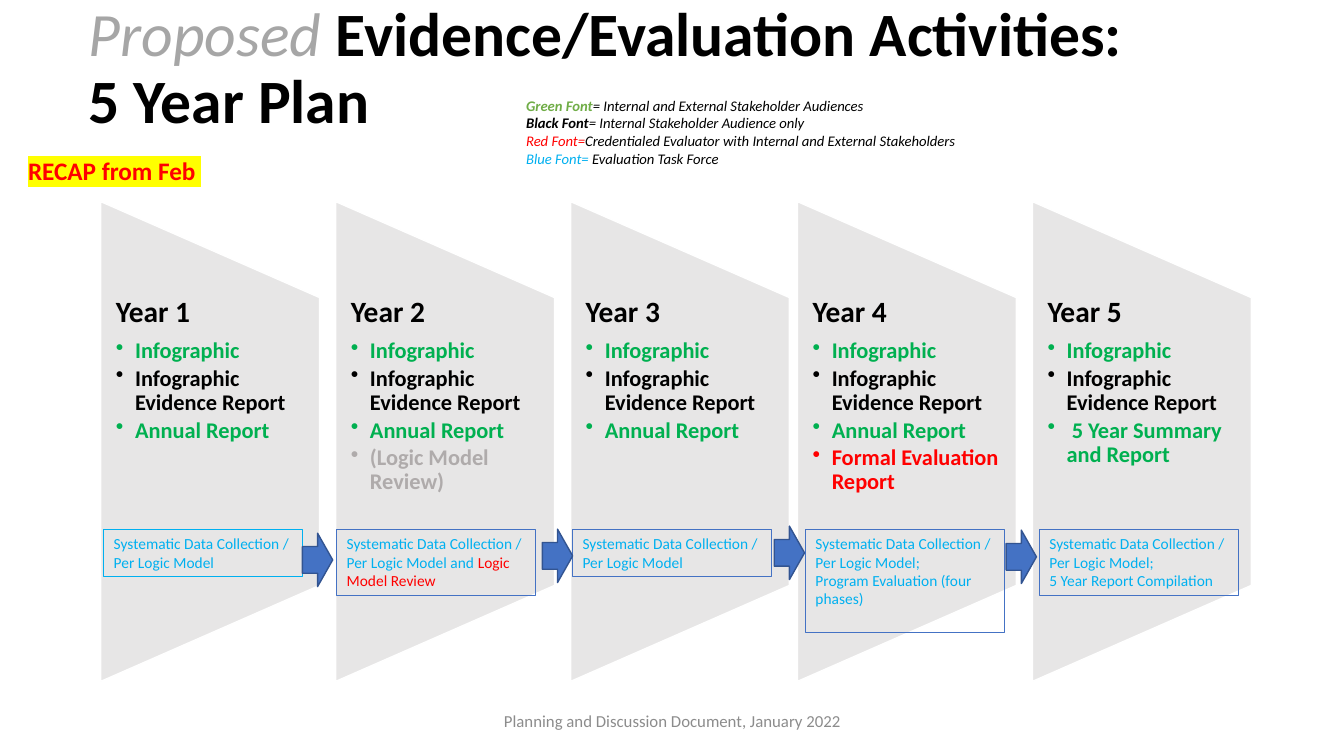
from dataclasses import dataclass

from lxml.etree import SubElement
from pptx import Presentation
from pptx.dml.color import RGBColor
from pptx.enum.shapes import MSO_SHAPE
from pptx.enum.text import MSO_ANCHOR, MSO_AUTO_SIZE, PP_ALIGN
from pptx.oxml import parse_xml
from pptx.oxml.ns import nsdecls, qn
from pptx.util import Inches, Pt


@dataclass(frozen=True)
class Theme:
    font: str = "Calibri"
    black: str = "000000"
    white: str = "FFFFFF"
    green: str = "00B050"
    lime: str = "70AD47"
    red: str = "FF0000"
    sky: str = "00B0F0"
    blue: str = "4472C4"
    navy: str = "325491"
    pale: str = "E7E6E6"
    silver: str = "A6A6A6"
    ash: str = "AFABAB"
    gray: str = "8C8C8C"
    yellow: str = "FFFF00"
    title: float = 44
    year: float = 21
    item: float = 16
    recap: float = 18
    foot: float = 12
    note: float = 11
    key: float = 10.5


T = Theme()

COMMON = [("Infographic", T.green), ("Infographic Evidence Report", T.black)]
ANNUAL = ("Annual Report", T.green)
COLLECT = "Systematic Data Collection / Per Logic Model"

# Panel left, items
YEARS = [
    (1.0, [ANNUAL]),
    (3.33, [ANNUAL, ("(Logic Model Review)", T.ash)]),
    (5.66, [ANNUAL]),
    (7.91, [ANNUAL, ("Formal Evaluation Report", T.red)]),
    (10.24, [(" 5 Year Summary and Report", T.green)]),
]

# Box left, height, outline, paragraphs of (text, colour) parts
TASKS = [
    (1.03, 0.47, T.sky, [[(COLLECT, T.sky)]]),
    (3.34, 0.66, T.blue, [[(COLLECT + " and ", T.sky), ("Logic Model Review", T.red)]]),
    (5.68, 0.47, T.blue, [[(COLLECT, T.sky)]]),
    (7.99, 1.03, T.blue, [[(COLLECT + ";", T.sky)],
                          [("Program Evaluation (four phases)", T.sky)]]),
    (10.31, 0.66, T.blue, [[(COLLECT + ";", T.sky)],
                           [("5 Year Report Compilation", T.sky)]]),
]

ARROWS = [(3.0, 5.29), (5.38, 5.25), (7.68, 5.22), (9.98, 5.26)]

LEGEND = [
    [("Green Font", T.lime, True), ("= Internal and External Stakeholder Audiences", T.black)],
    [("Black Font", T.black, True), ("= Internal Stakeholder Audience only", T.black)],
    [("Red Font=", T.red),
     ("Credentialed Evaluator with Internal and External Stakeholders", T.black)],
    [("Blue Font= ", T.sky), ("Evaluation Task Force", T.black)],
]


def add_run(para, text, size, color, bold=False, italic=False):
    run = para.add_run()
    run.text = text
    font = run.font
    font.name, font.size = T.font, Pt(size)
    font.bold, font.italic = bold, italic
    font.color.rgb = RGBColor.from_string(color)
    return run


def next_para(frame):
    """Return the first paragraph while it is empty, else a new one."""
    first = frame.paragraphs[0]
    return frame.add_paragraph() if first.runs else first


def add_lines(frame, lines, size, italic=False):
    for parts in lines:
        para = next_para(frame)
        para.alignment = PP_ALIGN.LEFT
        for text, color, *bold in parts:
            add_run(para, text, size, color, bool(bold), italic)


def add_box(slide, left, top, width, height, wrap=True):
    box = slide.shapes.add_textbox(*map(Inches, (left, top, width, height)))
    box.text_frame.word_wrap = wrap
    return box.text_frame


def add_form(slide, kind, place, fill, line, weight):
    form = slide.shapes.add_shape(kind, *map(Inches, place))
    form.shadow.inherit = False
    if fill:
        form.fill.solid()
        form.fill.fore_color.rgb = RGBColor.from_string(fill)
    else:
        form.fill.background()
    form.line.color.rgb = RGBColor.from_string(line)
    form.line.width = Pt(weight)
    return form


def set_bullet(para):
    props = para._p.get_or_add_pPr()
    props.set("marL", str(Inches(0.19)))
    props.set("indent", str(-Inches(0.19)))
    SubElement(props, qn("a:buChar")).set("char", "•")


def add_title(slide):
    title = slide.shapes.title
    title.left, title.top = Inches(0.78), Inches(-0.03)
    title.width, title.height = Inches(12.32), Inches(1.45)
    frame = title.text_frame
    frame.auto_size = MSO_AUTO_SIZE.NONE
    frame.vertical_anchor = MSO_ANCHOR.MIDDLE
    para = frame.paragraphs[0]
    para.alignment, para.line_spacing = PP_ALIGN.LEFT, 0.9
    add_run(para, "Proposed", T.title, T.silver, italic=True)
    add_run(para, " Evidence/Evaluation Activities:", T.title, T.black, True)
    para.add_line_break()
    add_run(para, "5 Year Plan", T.title, T.black, True)


def add_year(slide, name, left, items):
    wide, tall, mid = 2.17, 4.76, 4.38
    place = (left - (tall - wide) / 2, mid - wide / 2, tall, wide)
    panel = add_form(slide, MSO_SHAPE.FLOWCHART_MANUAL_OPERATION, place, T.pale, T.white, 1)
    panel.rotation = 270
    frame = add_box(slide, left, 2.95, wide, 2.86)
    frame.margin_left = frame.margin_right = Inches(0.15)
    frame.margin_top = frame.margin_bottom = 0
    head = next_para(frame)
    head.line_spacing, head.space_after = 0.9, Pt(7.4)
    add_run(head, name, T.year, T.black, True)
    for text, color in COMMON + items:
        para = next_para(frame)
        para.line_spacing, para.space_after = 0.9, Pt(2.4)
        set_bullet(para)
        add_run(para, text, T.item, color, True)


def add_task(slide, left, height, line, lines):
    place = (left, 5.25, 1.97, height)
    frame = add_form(slide, MSO_SHAPE.RECTANGLE, place, None, line, 0.75).text_frame
    frame.word_wrap = True
    frame.vertical_anchor = MSO_ANCHOR.TOP
    add_lines(frame, lines, T.note)


def add_foot(slide):
    frame = add_box(slide, 4.42, 6.95, 4.5, 0.4)
    frame.vertical_anchor = MSO_ANCHOR.MIDDLE
    para = frame.paragraphs[0]
    para.alignment = PP_ALIGN.CENTER
    add_run(para, "Planning and Discussion Document, January 2022", T.foot, T.gray)


def add_recap(slide):
    para = add_box(slide, 0.18, 1.49, 1.94, 0.4, False).paragraphs[0]
    run = add_run(para, "RECAP from Feb ", T.recap, T.red, True)
    mark = parse_xml(f'<a:highlight {nsdecls("a")}><a:srgbClr val="{T.yellow}"/></a:highlight>')
    run._r.rPr.find(qn("a:solidFill")).addnext(mark)


def main():
    deck = Presentation()
    deck.slide_width, deck.slide_height = Inches(13.33), Inches(7.5)
    slide = deck.slides.add_slide(deck.slide_layouts[5])
    add_title(slide)
    for num, (left, items) in enumerate(YEARS, 1):
        add_year(slide, f"Year {num}", left, items)
    add_foot(slide)
    for task in TASKS:
        add_task(slide, *task)
    for left, top in ARROWS:
        add_form(slide, MSO_SHAPE.RIGHT_ARROW, (left, top, 0.3, 0.53), T.blue, T.navy, 1)
    add_lines(add_box(slide, 5.12, 0.91, 4.54, 0.81, False), LEGEND, T.key, True)
    add_recap(slide)
    deck.save("out.pptx")


if __name__ == "__main__":
    main()
